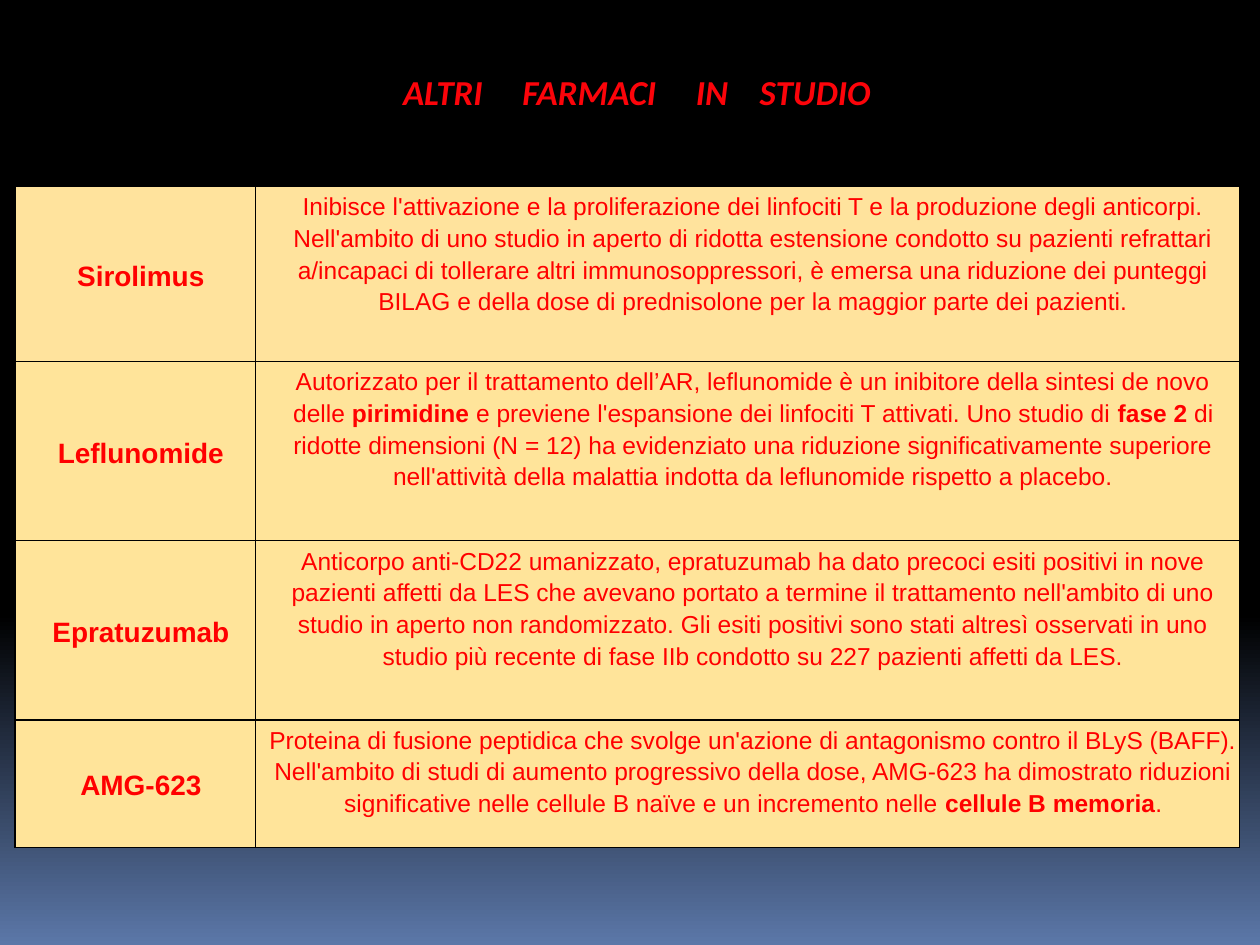
from dataclasses import dataclass

import lxml.etree
import pptx
import pptx.dml.color
import pptx.enum.text
import pptx.oxml.ns
import pptx.util

Cm = pptx.util.Cm
Pt = pptx.util.Pt
RGB = pptx.dml.color.RGBColor
CENTER = pptx.enum.text.PP_ALIGN.CENTER
MIDDLE = pptx.enum.text.MSO_ANCHOR.MIDDLE
TOP = pptx.enum.text.MSO_ANCHOR.TOP
qn = pptx.oxml.ns.qn

BLACK = RGB(0x00, 0x00, 0x00)
BLUE = RGB(0x5B, 0x77, 0xA8)
RED = RGB(0xFF, 0x00, 0x00)
TITLE_RED = RGB(0xFC, 0x04, 0x0A)
CREAM = RGB(0xFF, 0xE3, 0x9D)
SAND = RGB(0xFF, 0xE4, 0x9A)


@dataclass
class Drug:
    name: str
    texts: tuple[str, ...]
    height: float
    fill: RGB = SAND


@dataclass
class Word:
    text: str
    gap: float = 0


TITLE = [Word("ALTRI", 18), Word("FARMACI", 18), Word("IN", 13.5), Word("STUDIO")]

DRUGS = [
    Drug("Sirolimus", (
        "Inibisce l'attivazione e la proliferazione dei linfociti T e la produzione "
        "degli anticorpi. Nell'ambito di uno studio in aperto di ridotta estensione "
        "condotto su pazienti refrattari a/incapaci di tollerare altri "
        "immunosoppressori, è emersa una riduzione dei punteggi BILAG e della dose "
        "di prednisolone per la maggior parte dei pazienti.",
    ), 3.53, CREAM),
    Drug("Leflunomide", (
        "Autorizzato per il trattamento dell’AR, leflunomide è un inibitore della "
        "sintesi de novo delle ",
        "pirimidine ",
        "e previene l'espansione dei linfociti T attivati. Uno studio di ",
        "fase 2 ",
        "di ridotte dimensioni (N = 12) ha evidenziato una riduzione "
        "significativamente superiore nell'attività della malattia indotta da "
        "leflunomide rispetto a placebo.",
    ), 3.61),
    Drug("Epratuzumab", (
        "Anticorpo anti-CD22 umanizzato, epratuzumab ha dato precoci esiti positivi "
        "in nove pazienti affetti da LES che avevano portato a termine il "
        "trattamento nell'ambito di uno studio in aperto non randomizzato. Gli esiti "
        "positivi sono stati altresì osservati in uno studio più recente di fase IIb "
        "condotto su 227 pazienti affetti da LES.",
    ), 3.61),
    Drug("AMG-623", (
        "Proteina di fusione peptidica che svolge un'azione di antagonismo contro il "
        "BLyS (BAFF). Nell'ambito di studi di aumento progressivo della dose, "
        "AMG-623 ha dimostrato riduzioni significative nelle cellule B naïve e un "
        "incremento nelle ",
        "cellule B memoria",
        ".",
    ), 2.57),
]


def style(run, face: str, size: float, color: RGB, bold: bool) -> None:
    run.font.name = face
    run.font.size = Pt(size)
    run.font.color.rgb = color
    run.font.bold = bold


def border(cell) -> None:
    props = cell._tc.get_or_add_tcPr()
    for spot, side in enumerate(("a:lnL", "a:lnR", "a:lnT", "a:lnB")):
        line = lxml.etree.Element(qn(side), w=str(Pt(1)))
        fill = lxml.etree.SubElement(line, qn("a:solidFill"))
        lxml.etree.SubElement(fill, qn("a:srgbClr"), val=str(BLACK))
        props.insert(spot, line)


def fill_cell(cell, texts: tuple[str, ...], size: float, head: bool, fill: RGB) -> None:
    cell.fill.solid()
    cell.fill.fore_color.rgb = fill
    border(cell)
    cell.margin_left = cell.margin_right = cell.margin_bottom = Cm(0.03)
    cell.margin_top = Cm(0.03 if head else 0.06)
    cell.vertical_anchor = MIDDLE if head else TOP
    para = cell.text_frame.paragraphs[0]
    para.alignment = CENTER
    para.line_spacing = 1.15
    props = para._p.get_or_add_pPr()
    props.set("marL", str(Cm(0.23)))
    props.set("indent", "0")
    for index, text in enumerate(texts):
        run = para.add_run()
        run.text = text
        style(run, "Arial", size, RED, head or index % 2 == 1)


def add_grid(slide, drugs: list[Drug]) -> None:
    widths = (4.85, 19.84)
    tall = sum(drug.height for drug in drugs)
    frame = slide.shapes.add_table(
        len(drugs), len(widths), Cm(0.3), Cm(3.76), Cm(sum(widths)), Cm(tall))
    table = frame.table
    table.first_row = table.horz_banding = False
    for column, width in zip(table.columns, widths):
        column.width = Cm(width)
    for index, drug in enumerate(drugs):
        table.rows[index].height = Cm(drug.height)
        fill_cell(table.cell(index, 0), (drug.name,), 16, True, drug.fill)
        fill_cell(table.cell(index, 1), drug.texts, 14, False, drug.fill)


def add_title(slide, words: list[Word]) -> None:
    box = slide.shapes.add_textbox(Cm(0.89), Cm(1.3), Cm(23.9), Cm(1.09))
    box.text_frame.word_wrap = True
    para = box.text_frame.paragraphs[0]
    para.alignment = CENTER
    for word in words:
        pairs = [(word.text, 0), (" ", word.gap)] if word.gap else [(word.text, 0)]
        for text, gap in pairs:
            run = para.add_run()
            run.text = text
            style(run, "Calibri", 20, TITLE_RED, True)
            run.font.italic = True
            if gap:
                run._r.get_or_add_rPr().set("spc", str(round(gap * 100)))


def paint(slide) -> None:
    fill = slide.background.fill
    fill.gradient()
    fill.gradient_angle = 270
    for stop, color, place in zip(fill.gradient_stops, (BLACK, BLUE), (0.65, 1)):
        stop.color.rgb = color
        stop.position = place


def main() -> None:
    deck = pptx.Presentation()
    deck.slide_width = Cm(25.4)
    deck.slide_height = Cm(19.05)
    slide = deck.slides.add_slide(deck.slide_layouts[6])
    paint(slide)
    add_grid(slide, DRUGS)
    add_title(slide, TITLE)
    deck.save("out.pptx")


if __name__ == "__main__":
    main()
